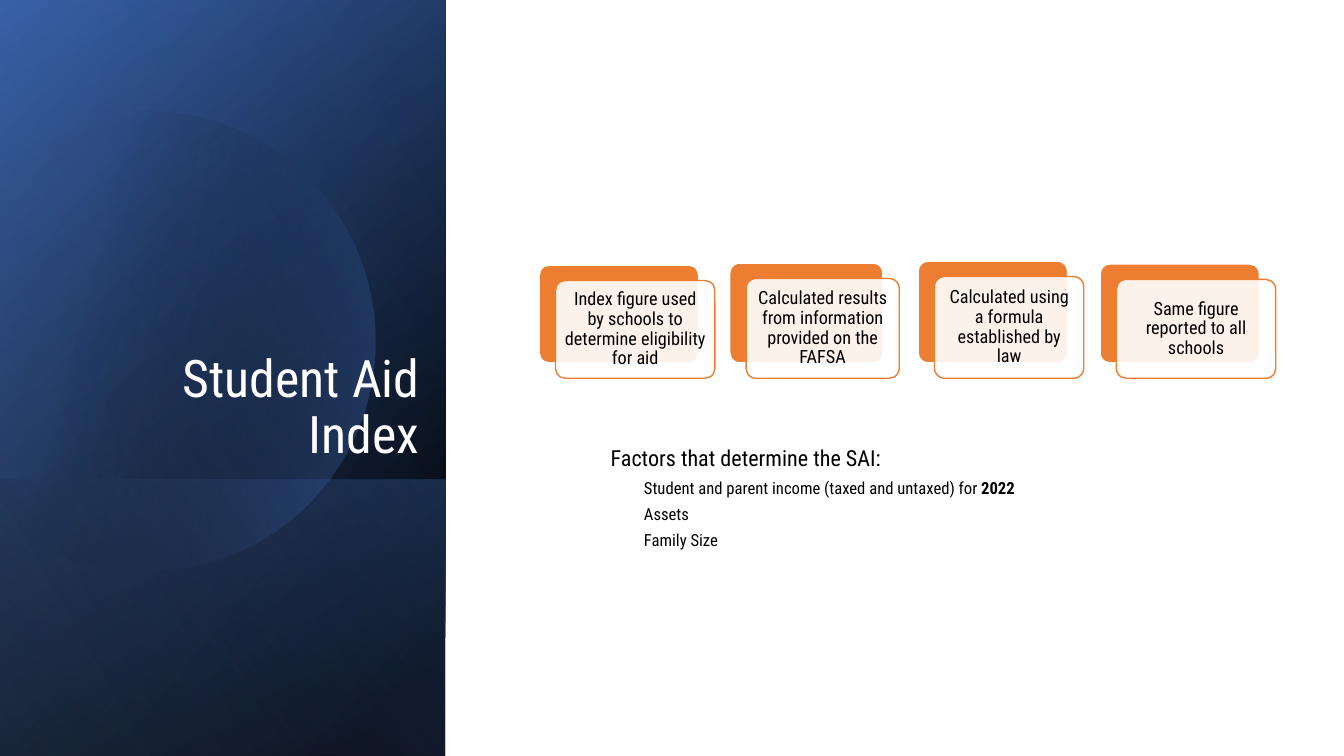
from lxml import etree
from pptx import Presentation
from pptx.dml.color import RGBColor
from pptx.enum.shapes import MSO_SHAPE as SHAPE
from pptx.enum.text import MSO_ANCHOR as ANCHOR, PP_ALIGN as ALIGN
from pptx.oxml import parse_xml
from pptx.oxml.ns import nsdecls, qn
from pptx.util import Pt

FONT = "Roboto Condensed"
ORANGE = "ED7D31"


def color(value):
    return RGBColor.from_string(value)


def fill_gradient(shape, stops, angle):
    """Give the shape a linear gradient of (position, colour, opacity) stops, in percent."""
    shape.shadow.inherit = False
    shape.line.fill.background()
    stop_xml = "".join(
        f'<a:gs pos="{pos * 1000}"><a:srgbClr val="{rgb}">'
        f'<a:alpha val="{opacity * 1000}"/></a:srgbClr></a:gs>'
        for pos, rgb, opacity in stops)
    gradient = parse_xml(
        f'<a:gradFill {nsdecls("a")} rotWithShape="1"><a:gsLst>{stop_xml}</a:gsLst>'
        f'<a:lin ang="{angle * 60000}" scaled="0"/></a:gradFill>')
    shape.element.spPr.find(qn("a:ln")).addprevious(gradient)


prs = Presentation()
prs.slide_width, prs.slide_height = Pt(960), Pt(540)
slide = prs.slides.add_slide(prs.slide_layouts[6])
shapes = slide.shapes

# Left panel: layered gradients, each a rectangle turned by 90 degrees
PANEL_WIDTH = 318.2
panel_layers = [  # height on the slide, stops, angle
    (540, [(8, "000000", 100), (100, "2F5597", 100)], 50),
    (540, [(0, "000000", 0), (99, "4472C4", 46)], 30),
    (197.3, [(2, "4472C4", 29), (100, "000000", 30)], 130),
    (540, [(0, "000000", 0), (99, "8FAADC", 11)], 120),
]
for index, (height, stops, angle) in enumerate(panel_layers):
    if index == 3:
        # The disc lies below the last layer
        x, y = 1.49, 1.1
        outline = []
        curves = [
            [(2.46, 1.12), (3.35, 1.77), (3.63, 2.75)],
            [(3.98, 3.97), (3.28, 5.23), (2.07, 5.58)],
            [(1.31, 5.8), (0.53, 5.61), (-0.03, 5.14)],
            [(-0.15, 5.03), (-0.15, 1.75), (0, 1.61)],
            [(0.23, 1.42), (0.5, 1.28), (0.8, 1.19)],
            [(1.03, 1.13), (1.26, 1.1), (1.49, 1.1)],
        ]
        disc = shapes.build_freeform(Pt(x * 72), Pt(y * 72), scale=1.0)
        for curve in curves:
            if curve[0][0] == curve[1][0]:  # straight left edge
                outline += curve
            else:
                for t in (step / 24 for step in range(1, 25)):
                    weights = ((1 - t) ** 3, 3 * t * (1 - t) ** 2, 3 * t ** 2 * (1 - t), t ** 3)
                    points = [(x, y), *curve]
                    outline.append(tuple(
                        sum(w * point[axis] for w, point in zip(weights, points))
                        for axis in (0, 1)))
            x, y = curve[-1]
        disc.add_line_segments([(Pt(px * 72), Pt(py * 72)) for px, py in outline])
        fill_gradient(disc.convert_to_shape(), [(29, "000000", 0), (100, "4472C4", 43)], 14)
    layer = shapes.add_shape(
        SHAPE.RECTANGLE, Pt((PANEL_WIDTH - height) / 2), Pt(540 - (height + PANEL_WIDTH) / 2),
        Pt(height), Pt(PANEL_WIDTH))
    layer.rotation = 90
    layer.element.spPr.find(qn("a:xfrm")).set("flipH", "1")
    fill_gradient(layer, stops, angle)

title = shapes.add_textbox(Pt(61.2), Pt(147.4), Pt(245.5), Pt(187.9)).text_frame
title.word_wrap = True
title.vertical_anchor = ANCHOR.BOTTOM
title.text = "Student Aid Index"
heading = title.paragraphs[0]
heading.alignment = ALIGN.RIGHT
heading.line_spacing = 0.9
heading.font.size, heading.font.name = Pt(37), FONT
heading.font.color.rgb = color("FFFFFF")

# Factors
factors = shapes.add_textbox(Pt(429.1), Pt(316.1), Pt(410.4), Pt(93.6)).text_frame
factors.word_wrap = True
factors.text = "\n".join([
    "Factors that determine the SAI:",
    "Student and parent income (taxed and untaxed) for ",
    "Assets",
    "Family Size",
])
factors.paragraphs[1].add_run().text = "2022"
factors.paragraphs[1].runs[1].font.bold = True
for index, factor in enumerate(factors.paragraphs):
    factor.line_spacing = 0.9
    factor.space_after = Pt(6)
    factor.font.name = FONT
    factor.font.size = Pt(11.9 if index else 15.8)
    factor.font.color.rgb = color("000000")
    if index:
        factor.level = 1
        properties = factor._p.get_or_add_pPr()
        properties.set("marL", str(Pt(23.8)))
        properties.set("indent", "0")

# Cards: an orange back plate and a translucent white front
CARD_BOTTOM = 259.2
cards = [  # left, width, height, text
    (385.2, 113.8, 69.8, "Index figure used by schools to determine eligibility for aid"),
    (521.3, 109.4, 71.3, "Calculated results from information provided on the FAFSA"),
    (655.9, 106.6, 72.7, "Calculated using a formula established by law"),
    (785.8, 113.8, 70.6, "Same figure reported to all schools"),
]
for left, width, height, text in cards:
    for offset_x, offset_y, fill, line in ((0, 0, ORANGE, "FFFFFF"), (11.6, 11, "FFFFFF", ORANGE)):
        card = shapes.add_shape(
            SHAPE.ROUNDED_RECTANGLE, Pt(left + offset_x), Pt(CARD_BOTTOM - height + offset_y),
            Pt(width), Pt(height))
        card.adjustments[0] = 0.1
        card.shadow.inherit = False
        card.fill.solid()
        card.fill.fore_color.rgb = color(fill)
        card.line.color.rgb = color(line)
        card.line.width = Pt(1)
    front_color = card.element.spPr.find(qn("a:solidFill")).find(qn("a:srgbClr"))
    etree.SubElement(front_color, qn("a:alpha")).set("val", "90000")

    frame = card.text_frame
    frame.word_wrap = True
    frame.vertical_anchor = ANCHOR.MIDDLE
    frame.margin_left = frame.margin_right = frame.margin_top = frame.margin_bottom = Pt(4.2)
    frame.text = text
    label = frame.paragraphs[0]
    label.alignment = ALIGN.CENTER
    label.line_spacing = 0.9
    label.font.size, label.font.name = Pt(13), FONT  # four lines fit inside a card
    label.font.color.rgb = color("000000")

prs.save("out.pptx")
